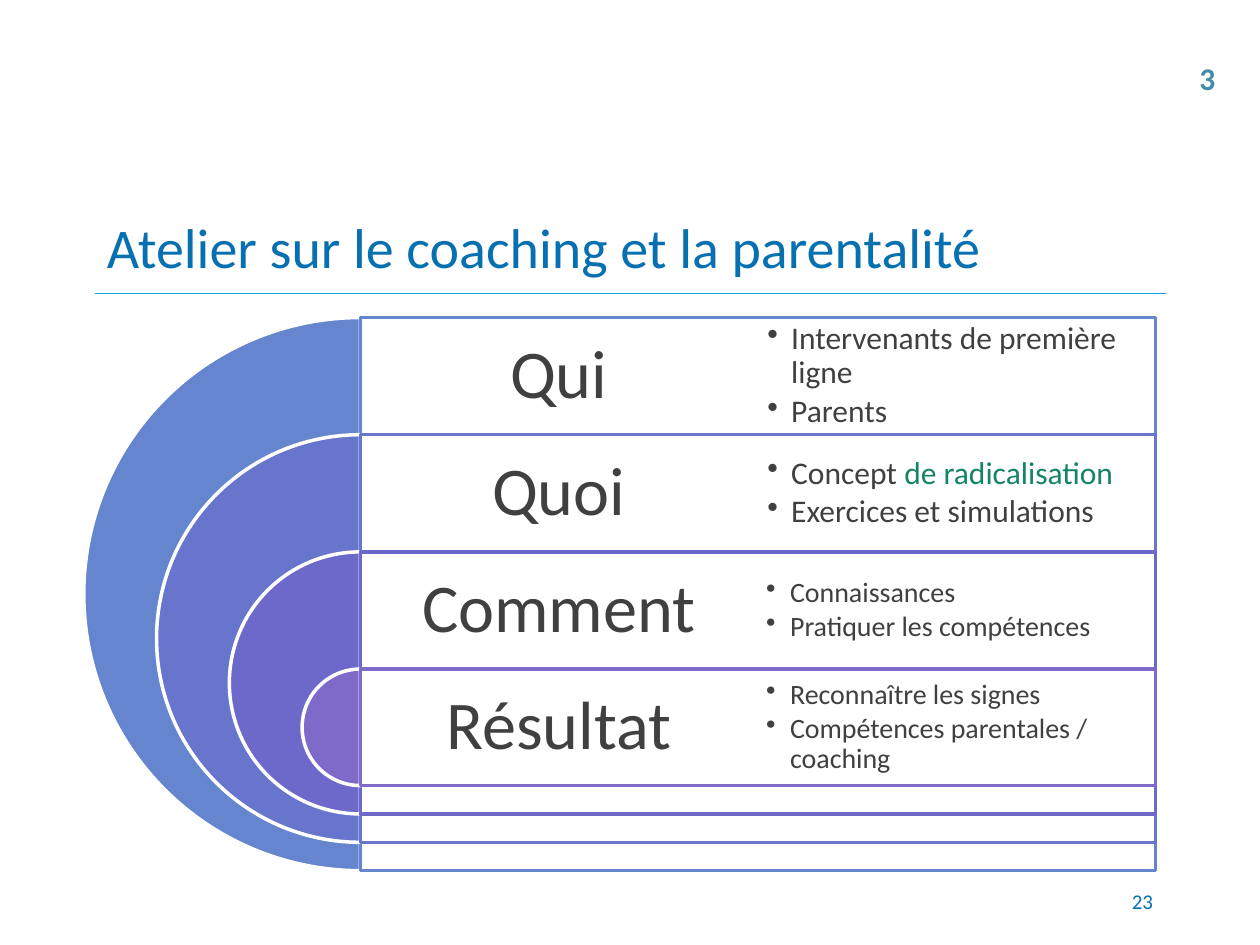
from dataclasses import dataclass

from lxml.etree import SubElement
from pptx import Presentation
from pptx.dml.color import RGBColor
from pptx.enum.shapes import MSO_CONNECTOR, MSO_SHAPE
from pptx.enum.text import MSO_ANCHOR, PP_ALIGN
from pptx.oxml.ns import qn
from pptx.util import Inches, Pt


@dataclass(frozen=True)
class Theme:
    font: str = "Calibri"
    title: str = "0770B1"
    rule: str = "0BA7DF"
    ink: str = "404040"
    accent: str = "158466"
    badge: str = "3E8EA9"
    white: str = "FFFFFF"
    rings: tuple = ("6585CF", "6775CD", "6C69CB", "7E6BC9")
    head: int = 32
    label: int = 39
    large: int = 18
    small: int = 16
    foot: int = 12


COLS, ROWS = 100, 75  # square cells over the whole slide
PAD = (1, 0.5, 1, 0.5)


class Deck:
    def __init__(self, theme):
        self.theme = theme
        self.file = Presentation()
        self.file.slide_width, self.file.slide_height = Inches(10), Inches(7.5)
        self.slide = self.file.slides.add_slide(self.file.slide_layouts[6])

    def span(self, *cells):
        return [int(self.file.slide_width * cell / COLS) for cell in cells]

    def place(self, x, y, wide, high):
        return self.span(x, y, wide, high)

    def frame(self, shape, text, pad, anchor=MSO_ANCHOR.MIDDLE, wrap=True):
        frame = shape.text_frame
        frame.word_wrap = wrap
        frame.vertical_anchor = anchor
        (frame.margin_left, frame.margin_top,
         frame.margin_right, frame.margin_bottom) = self.span(*pad)
        frame.text = text
        return frame

    def style(self, run, size, color, bold=False):
        run.font.name, run.font.size, run.font.bold = self.theme.font, Pt(size), bold
        run.font.color.rgb = RGBColor.from_string(color)

    def rule(self, x, y, end, color):
        line = self.slide.shapes.add_connector(
            MSO_CONNECTOR.STRAIGHT, *self.span(x, y, end, y))
        line.line.color.rgb = RGBColor.from_string(color)
        line.line.width = Pt(0.75)
        SubElement(line._element.spPr, qn("a:effectLst"))

    def shape(self, kind, box, fill, edge):
        shape = self.slide.shapes.add_shape(kind, *self.place(*box))
        shape.shadow.inherit = False
        shape.fill.solid()
        shape.fill.fore_color.rgb = RGBColor.from_string(fill)
        shape.line.color.rgb = RGBColor.from_string(edge)
        shape.line.width = Pt(2)
        return shape

    def half(self, box, fill):
        pie = self.shape(MSO_SHAPE.PIE, box, fill, self.theme.white)
        pie.adjustments[0], pie.adjustments[1] = 54, 162

    def panel(self, box, edge, text, pad):
        panel = self.shape(MSO_SHAPE.RECTANGLE, box, self.theme.white, edge)
        color = panel._element.spPr.find(qn("a:solidFill"))[0]
        SubElement(color, qn("a:alpha"), val="90000")
        para = self.frame(panel, text, pad).paragraphs[0]
        para.alignment = PP_ALIGN.CENTER
        para.line_spacing, para.space_after = 0.9, Pt(13.7)
        self.style(para.runs[0], self.theme.label, self.theme.ink)

    def text(self, box, text, size, color, align=PP_ALIGN.LEFT, bold=False,
             anchor=MSO_ANCHOR.MIDDLE, wrap=True):
        area = self.slide.shapes.add_textbox(*self.place(*box))
        para = self.frame(area, text, PAD, anchor, wrap).paragraphs[0]
        para.alignment = align
        self.style(para.runs[0], size, color, bold)

    def bullets(self, box, items, size):
        area = self.slide.shapes.add_textbox(*self.place(*box))
        plain = "\n".join(item[0] for item in items)
        frame = self.frame(area, plain, [size / 22.5] * 4)
        for para, item in zip(frame.paragraphs, items):
            props = para._p.get_or_add_pPr()
            indent = self.span(1.9)[0]
            props.set("marL", str(indent))
            props.set("indent", str(-indent))
            props.set("lvl", "1")
            tint = SubElement(props, qn("a:buClr"))
            SubElement(tint, qn("a:srgbClr"), val=self.theme.ink)
            SubElement(props, qn("a:buChar"), char="•")
            para.line_spacing, para.space_after = 0.9, Pt(size * 0.15)
            for part in item[1:]:
                para.add_run().text = part
            for run, color in zip(para.runs, (self.theme.ink, self.theme.accent)):
                self.style(run, size, color)


def main():
    theme = Theme()
    deck = Deck(theme)

    # Each item is a tuple: plain text, then any accented text
    bands = [
        ("Qui", theme.large, [("Intervenants de première ligne",), ("Parents",)]),
        ("Quoi", theme.large, [("Concept ", "de radicalisation"),
                               ("Exercices et simulations",)]),
        ("Comment", theme.small, [("Connaissances",),
                                  ("Pratiquer les compétences",)]),
        ("Résultat", theme.small, [("Reconnaître les signes",),
                                   ("Compétences parentales / coaching",)]),
    ]
    left, top, wide, step = 28.6, 25.2, 63.1, 9.3
    outer, shrink = 43.9, 11.55
    middle, inset = 60.1, 1.6

    # Title rule
    deck.rule(7.5, 23.3, 92.5, theme.rule)

    # Nested half discs and their panels
    for i, ((name, size, items), color) in enumerate(zip(bands, theme.rings)):
        y, high = top + i * step, outer - i * shrink
        deck.half((left - high / 2, y, high, high), color)
        pad = (inset, inset, left + wide - middle + inset, high - step + inset)
        deck.panel((left, y, wide, high), color, name, pad)

    # Details beside each label
    for i, (name, size, items) in enumerate(bands):
        deck.bullets((middle, top + i * step, wide / 2, step), items, size)

    # Title and page numbers
    deck.text((7.5, 15.8, 85, 7.5), "Atelier sur le coaching et la parentalité",
              theme.head, theme.title)
    deck.text((71.7, 69.5, 20.8, 4), "23", theme.foot, theme.title, PP_ALIGN.RIGHT)
    deck.text((94.2, 4.2, 3.2, 4), "3", theme.large, theme.badge, bold=True,
              anchor=MSO_ANCHOR.TOP, wrap=False)

    deck.file.save("out.pptx")


if __name__ == "__main__":
    main()
